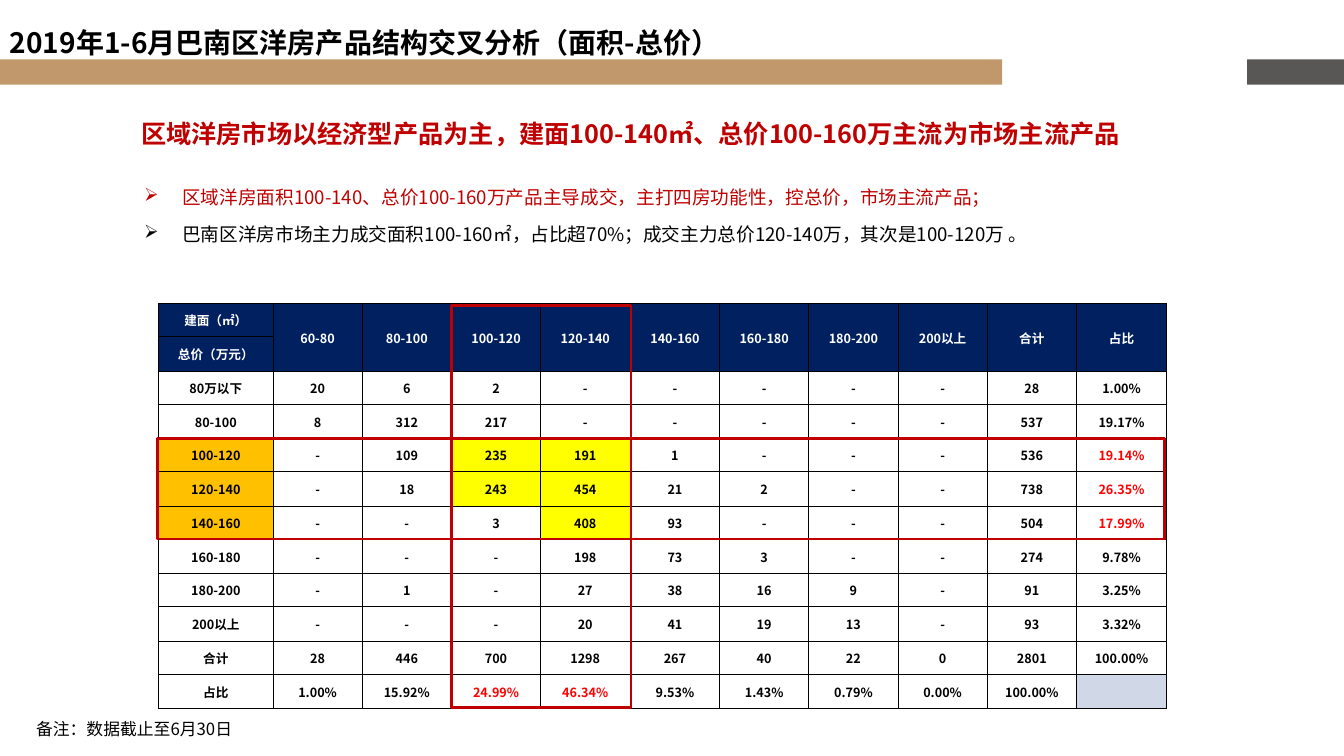
from dataclasses import dataclass

import lxml.etree
import pptx
import pptx.dml.color
import pptx.enum.shapes
import pptx.enum.text
import pptx.oxml.ns
import pptx.util

EMU_PER_PX = 9144  # 100 px to the inch
FONT = "Noto Sans CJK SC"
BLACK, WHITE, CRIMSON, RED = "000000", "FFFFFF", "C00000", "FF0000"
NAVY, ORANGE, YELLOW, PALE_BLUE = "002060", "FFC000", "FFFF00", "D0D8E8"


@dataclass
class Box:
    left: int
    top: int
    width: int
    height: int
    fill: str | None = None
    line: str | None = None


@dataclass
class Line:
    text: str
    size: float
    color: str = BLACK
    bold: bool = False
    spacing: float = 1.0
    space_before: float = 0
    bullet: str | None = None


@dataclass
class TextBlock:
    box: Box
    lines: list[Line]
    middle: bool = False
    margins: tuple[int, int] = (10, 5)


BARS = [Box(0, 59, 994, 25, fill="C1986C"), Box(1237, 59, 96, 25, fill="595656")]
FRAMES = [Box(448, 303, 178, 399, line=CRIMSON), Box(156, 435, 999, 100, line=CRIMSON)]
TITLE = TextBlock(Box(0, 20, 915, 44), [Line("2019年1-6月巴南区洋房产品结构交叉分析（面积-总价）", 20, bold=True)])
TEXTS = [
    TextBlock(Box(133, 168, 999, 82), [
        Line("区域洋房面积100-140、总价100-160万产品主导成交，主打四房功能性，控总价，市场主流产品；",
             13.3, CRIMSON, spacing=1.5, bullet="➢"),
        Line("巴南区洋房市场主力成交面积100-160㎡，占比超70%；成交主力总价120-140万，其次是100-120万 。",
             13.3, spacing=1.5, space_before=2.7, bullet="➢"),
    ]),
    TextBlock(Box(128, 75, 1014, 100), [
        Line("区域洋房市场以经济型产品为主，建面100-140㎡、总价100-160万主流为市场主流产品",
             18, CRIMSON, bold=True, spacing=1.5),
    ], middle=True, margins=(12, 6)),
    TextBlock(Box(26, 695, 292, 55), [Line("备注：数据截止至6月30日", 12)], middle=True),
]

TABLE_BOX = Box(157, 301, 1000, 402)
LABEL_WIDTH = 114
ROWS = [row.split("|") for row in """\
建面（㎡）|60-80|80-100|100-120|120-140|140-160|160-180|180-200|200以上|合计|占比
总价（万元）||||||||||
80万以下|20|6|2|-|-|-|-|-|28|1.00%
80-100|8|312|217|-|-|-|-|-|537|19.17%
100-120|-|109|235|191|1|-|-|-|536|19.14%
120-140|-|18|243|454|21|2|-|-|738|26.35%
140-160|-|-|3|408|93|-|-|-|504|17.99%
160-180|-|-|-|198|73|3|-|-|274|9.78%
180-200|-|1|-|27|38|16|9|-|91|3.25%
200以上|-|-|-|20|41|19|13|-|93|3.32%
合计|28|446|700|1298|267|40|22|0|2801|100.00%
占比|1.00%|15.92%|24.99%|46.34%|9.53%|1.43%|0.79%|0.00%|100.00%|""".splitlines()]
HEADER_ROWS = 2
KEY_ROWS = (4, 5, 6)
KEY_COLUMNS = (3, 4)
CORE_CELLS = {(4, 3), (4, 4), (5, 3), (5, 4), (6, 4)}
LAST_ROW, LAST_COLUMN = len(ROWS) - 1, len(ROWS[0]) - 1


def px(length: int) -> pptx.util.Emu:
    return pptx.util.Emu(length * EMU_PER_PX)


def rgb(color: str) -> pptx.dml.color.RGBColor:
    return pptx.dml.color.RGBColor.from_string(color)


def bounds(box: Box) -> list[pptx.util.Emu]:
    return [px(length) for length in (box.left, box.top, box.width, box.height)]


def add_element(parent, tag: str, **attributes: str):
    return lxml.etree.SubElement(parent, pptx.oxml.ns.qn(tag), attributes)


def format_runs(paragraph, size: float, color: str, bold: bool) -> None:
    for run in paragraph.runs:
        run.font.size = pptx.util.Pt(size)
        run.font.bold = bold
        run.font.name = FONT
        run.font.color.rgb = rgb(color)
        add_element(run.font._element, "a:ea", typeface=FONT)


def draw_box(slide, box: Box) -> None:
    shape = slide.shapes.add_shape(pptx.enum.shapes.MSO_SHAPE.RECTANGLE, *bounds(box))
    shape.shadow.inherit = False
    if box.fill:
        shape.fill.solid()
        shape.fill.fore_color.rgb = rgb(box.fill)
    else:
        shape.fill.background()
    if box.line:
        shape.line.color.rgb = rgb(box.line)
        shape.line.width = pptx.util.Pt(1.75)
    else:
        shape.line.fill.background()


def draw_text(slide, block: TextBlock) -> None:
    frame = slide.shapes.add_textbox(*bounds(block.box)).text_frame
    frame.word_wrap = True
    frame.margin_left = frame.margin_right = px(block.margins[0])
    frame.margin_top = frame.margin_bottom = px(block.margins[1])
    anchors = pptx.enum.text.MSO_ANCHOR
    frame.vertical_anchor = anchors.MIDDLE if block.middle else anchors.TOP
    frame.text = "\n".join(line.text for line in block.lines)
    for paragraph, line in zip(frame.paragraphs, block.lines):
        paragraph.line_spacing = line.spacing
        if line.space_before:
            paragraph.space_before = pptx.util.Pt(line.space_before)
        if line.bullet:
            properties = paragraph._p.get_or_add_pPr()
            properties.set("marL", str(px(38)))
            properties.set("indent", str(-px(38)))
            add_element(properties, "a:buChar", char=line.bullet)
        format_runs(paragraph, line.size, line.color, line.bold)


def cell_fill(row: int, column: int) -> str:
    if row < HEADER_ROWS:
        return NAVY
    if (row, column) in CORE_CELLS:
        return YELLOW
    if row in KEY_ROWS and column == 0:
        return ORANGE
    return PALE_BLUE if (row, column) == (LAST_ROW, LAST_COLUMN) else WHITE


def cell_color(row: int, column: int) -> str:
    if row < HEADER_ROWS:
        return WHITE
    key_share = (row in KEY_ROWS and column == LAST_COLUMN) or (row == LAST_ROW and column in KEY_COLUMNS)
    return RED if key_share else BLACK


def format_cell(cell, text: str, fill: str, color: str) -> None:
    cell.text = text
    cell.vertical_anchor = pptx.enum.text.MSO_ANCHOR.MIDDLE
    cell.margin_left = cell.margin_right = cell.margin_top = px(1)
    cell.margin_bottom = 0
    paragraph = cell.text_frame.paragraphs[0]
    paragraph.alignment = pptx.enum.text.PP_ALIGN.CENTER
    format_runs(paragraph, 9, color, True)
    if not text:
        add_element(paragraph._p, "a:endParaRPr", sz="900")
    properties = cell._tc.get_or_add_tcPr()
    for side in ("a:lnL", "a:lnR", "a:lnT", "a:lnB"):
        border = add_element(properties, side, w=str(pptx.util.Pt(0.5)))
        add_element(add_element(border, "a:solidFill"), "a:srgbClr", val=BLACK)
    cell.fill.solid()
    cell.fill.fore_color.rgb = rgb(fill)


def draw_table(slide) -> None:
    table = slide.shapes.add_table(len(ROWS), len(ROWS[0]), *bounds(TABLE_BOX)).table
    data_width = TABLE_BOX.width - LABEL_WIDTH
    for index, column in enumerate(table.columns):
        # Rounded edges keep the total width exact
        width = data_width * index // LAST_COLUMN - data_width * (index - 1) // LAST_COLUMN
        column.width = px(width if index else LABEL_WIDTH)
    for index, row in enumerate(table.rows):
        edges = [TABLE_BOX.height * step // len(ROWS) for step in (index, index + 1)]
        row.height = px(edges[1] - edges[0])
    for column in range(1, len(ROWS[0])):
        table.cell(0, column).merge(table.cell(HEADER_ROWS - 1, column))
    for row, texts in enumerate(ROWS):
        for column, text in enumerate(texts):
            format_cell(table.cell(row, column), text, cell_fill(row, column), cell_color(row, column))


def main() -> None:
    presentation = pptx.Presentation()
    presentation.slide_width, presentation.slide_height = px(1333), px(750)
    slide = presentation.slides.add_slide(presentation.slide_layouts[6])

    # Header bars and title
    for bar in BARS:
        draw_box(slide, bar)
    draw_text(slide, TITLE)

    # Cross table with its highlight frames
    draw_table(slide)
    for frame in FRAMES:
        draw_box(slide, frame)

    # Findings, headline and footnote
    for block in TEXTS:
        draw_text(slide, block)
    presentation.save("out.pptx")


if __name__ == "__main__":
    main()
